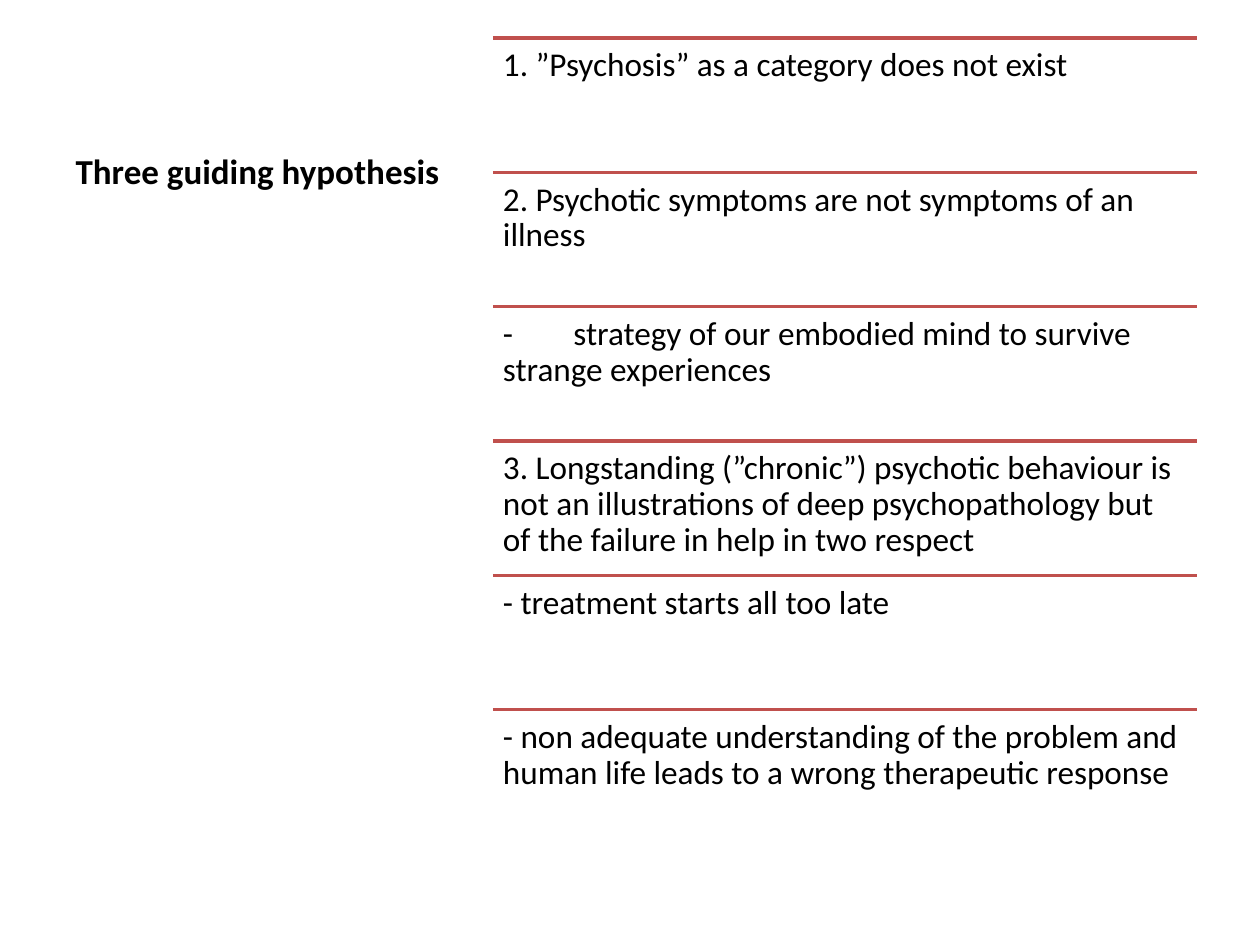
"""Build a slide listing three guiding hypotheses between ruled lines."""
import pptx
import pptx.dml.color
import pptx.enum.shapes
import pptx.enum.text
import pptx.oxml.ns
import pptx.util
from lxml import etree

TITLE = "Three guiding hypothesis"
ITEMS = [
    "1. ”Psychosis” as a category does not exist",
    "2. Psychotic symptoms are not symptoms of an illness",
    "-\t strategy of our embodied mind to survive strange experiences",
    "3. Longstanding (”chronic”) psychotic behaviour is not an illustrations of "
    "deep psychopathology but of the failure in help in two respect",
    "- treatment starts all too late",
    "- non adequate understanding of the problem and human life leads to a wrong "
    "therapeutic response",
]
FONT = "Calibri"
BLACK = pptx.dml.color.RGBColor(0x00, 0x00, 0x00)
RED = pptx.dml.color.RGBColor(0xC0, 0x50, 0x4D)
SLIDE_W, SLIDE_H = 1260, 945
TITLE_BOX = (63, 38, 415, 160)
LIST_X, LIST_Y, LIST_W, LIST_H = 493, 38, 704, 806
INSET = 10


def px(n):
    return pptx.util.Emu(round(n * 914400 / 126))


def add_run(p, text, size, bold=False):
    r = p.add_run()
    r.text = text
    r.font.name = FONT
    r.font.size = pptx.util.Pt(size)
    r.font.bold = bold
    r.font.color.rgb = BLACK


def add_title(slide):
    sp = slide.shapes.title
    sp.left, sp.top, sp.width, sp.height = map(px, TITLE_BOX)
    tf = sp.text_frame
    tf.word_wrap = True
    tf.auto_size = pptx.enum.text.MSO_AUTO_SIZE.NONE
    tf.vertical_anchor = pptx.enum.text.MSO_ANCHOR.BOTTOM
    p = tf.paragraphs[0]
    p.alignment = pptx.enum.text.PP_ALIGN.LEFT
    add_run(p, TITLE, 20, bold=True)


def add_rule(shapes, y):
    line = shapes.add_connector(
        pptx.enum.shapes.MSO_CONNECTOR.STRAIGHT,
        px(LIST_X), px(y), px(LIST_X + LIST_W), px(y))
    line.line.color.rgb = RED
    line.line.width = pptx.util.Pt(2)
    etree.SubElement(line._element.spPr, pptx.oxml.ns.qn("a:effectLst"))


def add_item(shapes, text, y, height):
    sp = shapes.add_textbox(px(LIST_X), px(y), px(LIST_W), px(height))
    tf = sp.text_frame
    tf.word_wrap = True
    tf.margin_left = tf.margin_right = tf.margin_top = tf.margin_bottom = px(INSET)
    p = tf.paragraphs[0]
    p.line_spacing = 0.9
    add_run(p, text, 19)


def main():
    prs = pptx.Presentation()
    prs.slide_width, prs.slide_height = px(SLIDE_W), px(SLIDE_H)
    slide = prs.slides.add_slide(prs.slide_layouts.get_by_name("Title Only"))
    add_title(slide)
    group = slide.shapes.add_group_shape()
    row_h = LIST_H / len(ITEMS)
    for i, text in enumerate(ITEMS):
        y = LIST_Y + i * row_h
        add_rule(group.shapes, y)
        add_item(group.shapes, text, y, row_h)
    prs.save("out.pptx")


if __name__ == "__main__":
    main()
